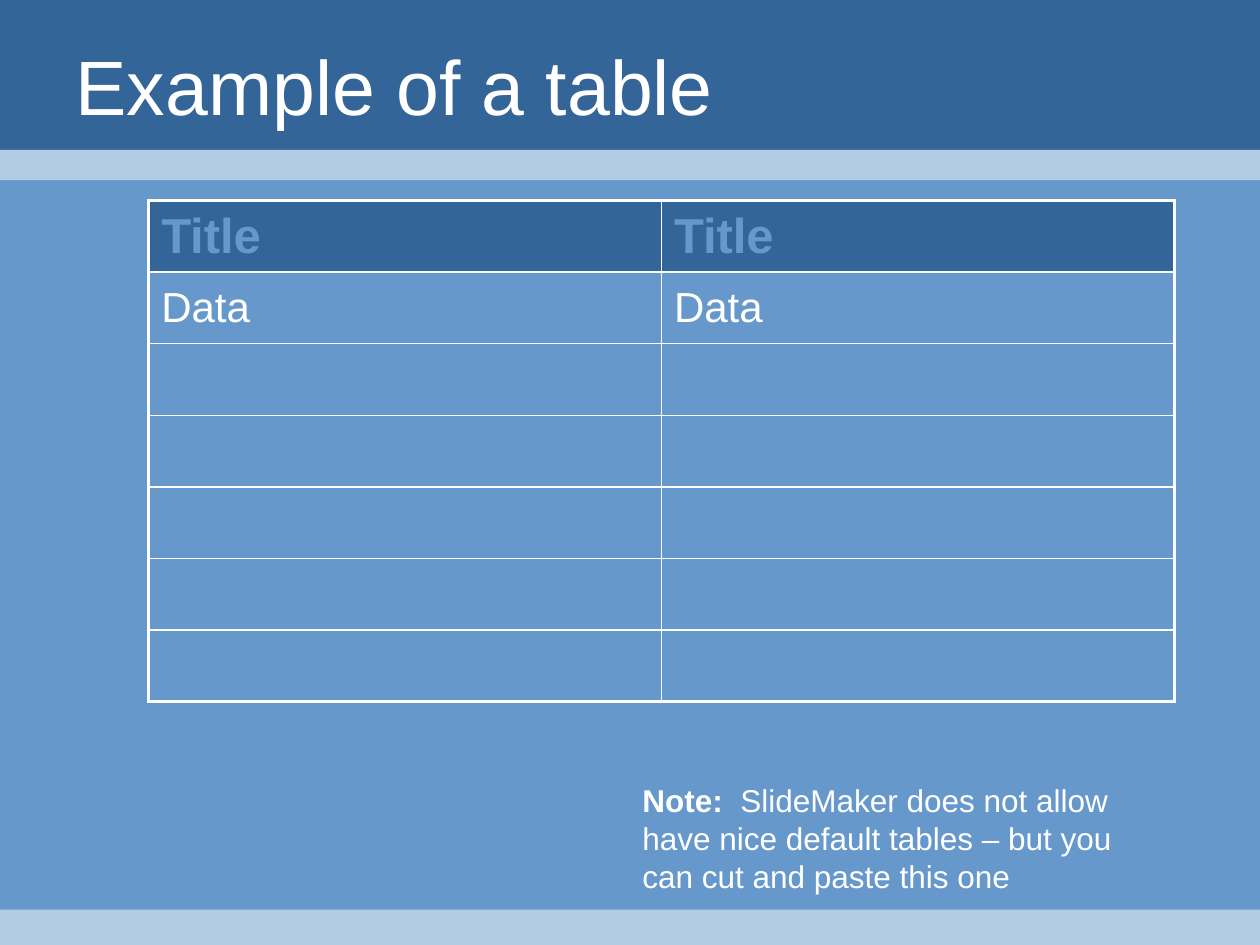
import pptx
import pptx.util
import pptx.dml.color
import pptx.enum.shapes
import pptx.enum.text
import pptx.oxml
import pptx.oxml.ns
from pptx.util import Inches

FONT = "Arial"
WHITE = "FFFFFF"
DARK_BLUE = "336599"
MID_BLUE = "6698CC"
PALE_BLUE = "B3CCE6"
MIDDLE = pptx.enum.text.MSO_ANCHOR.MIDDLE
ROWS = [["Title", "Title"], ["Data", "Data"]] + [["", ""]] * 5


def color(hex_string):
    return pptx.dml.color.RGBColor.from_string(hex_string)


def set_font(font, size, hex_string, bold=None):
    font.name = FONT
    font.size = pptx.util.Pt(size)
    font.bold = bold
    font.color.rgb = color(hex_string)


def add_band(slide, left, top, width, height, fill):
    band = slide.shapes.add_shape(
        pptx.enum.shapes.MSO_SHAPE.RECTANGLE, left, top, width, height)
    band.shadow.inherit = False
    band.fill.solid()
    band.fill.fore_color.rgb = color(fill)
    band.line.fill.background()


def place_title(slide, left, top, width, height, text):
    title = slide.shapes.title
    title.left, title.top, title.width, title.height = left, top, width, height
    frame = title.text_frame
    frame.text = text
    frame.word_wrap = True
    frame.auto_size = pptx.enum.text.MSO_AUTO_SIZE.NONE
    frame.vertical_anchor = MIDDLE
    paragraph = frame.paragraphs[0]
    paragraph.alignment = pptx.enum.text.PP_ALIGN.LEFT
    set_font(paragraph.font, 44, WHITE)
    # Bring the title in front of the bands
    title.element.getparent().append(title.element)


def set_borders(cell, widths):
    """Draw white borders; widths maps each side (L, R, T, B) to points."""
    properties = cell._tc.get_or_add_tcPr()
    for index, (side, width) in enumerate(widths.items()):
        line = pptx.oxml.parse_xml(
            f'<a:ln{side} {pptx.oxml.ns.nsdecls("a")} w="{pptx.util.Pt(width)}">'
            f'<a:solidFill><a:srgbClr val="{WHITE}"/></a:solidFill></a:ln{side}>')
        properties.insert(index, line)


def add_data_table(slide, left, top, width, height, rows):
    last_row, last_column = len(rows) - 1, len(rows[0]) - 1
    table = slide.shapes.add_table(
        len(rows), len(rows[0]), left, top, width, height).table
    table.first_row = table.horz_banding = False
    for r, texts in enumerate(rows):
        for c, text in enumerate(texts):
            cell = table.cell(r, c)
            cell.text = text
            cell.vertical_anchor = MIDDLE
            paragraph = cell.text_frame.paragraphs[0]
            if r == 0:
                cell.fill.solid()
                cell.fill.fore_color.rgb = color(DARK_BLUE)
                set_font(paragraph.font, 28, MID_BLUE, True)
            else:
                cell.fill.background()
                set_font(paragraph.font, 24, WHITE, False)
            # Thick outer frame, thin inner grid
            on_frame = {"L": c == 0, "R": c == last_column,
                        "T": r == 0, "B": r == last_row}
            set_borders(cell, {side: 2.25 if outer else 1
                               for side, outer in on_frame.items()})


def add_note(slide, left, top, width, height, label, text):
    frame = slide.shapes.add_textbox(left, top, width, height).text_frame
    frame.word_wrap = True
    paragraph = frame.paragraphs[0]
    set_font(paragraph.font, 18, WHITE)
    for words, bold in ((label, True), (text, False)):
        run = paragraph.add_run()
        run.text = words
        set_font(run.font, 18, WHITE, bold)


def main():
    presentation = pptx.Presentation()
    presentation.slide_width = Inches(10)
    presentation.slide_height = Inches(7.5)
    slide = presentation.slides.add_slide(presentation.slide_layouts[5])
    slide.background.fill.solid()
    slide.background.fill.fore_color.rgb = color(MID_BLUE)

    # Header and footer bands
    for top, height, fill in ((0, 1.31, DARK_BLUE), (1.19, 0.24, PALE_BLUE),
                              (7.22, 0.28, PALE_BLUE)):
        add_band(slide, 0, Inches(top), Inches(10), Inches(height), fill)

    # Title, table and note
    place_title(slide, Inches(0.5), Inches(0.28), Inches(9.07), Inches(0.79),
                "Example of a table")
    add_data_table(slide, Inches(1.18), Inches(1.59), Inches(8.14),
                   Inches(3.98), ROWS)
    add_note(slide, Inches(5), Inches(6.15), Inches(4.21), Inches(1), "Note:  ",
             "SlideMaker does not allow have nice default tables – "
             "but you can cut and paste this one")

    presentation.save("out.pptx")


if __name__ == "__main__":
    main()
